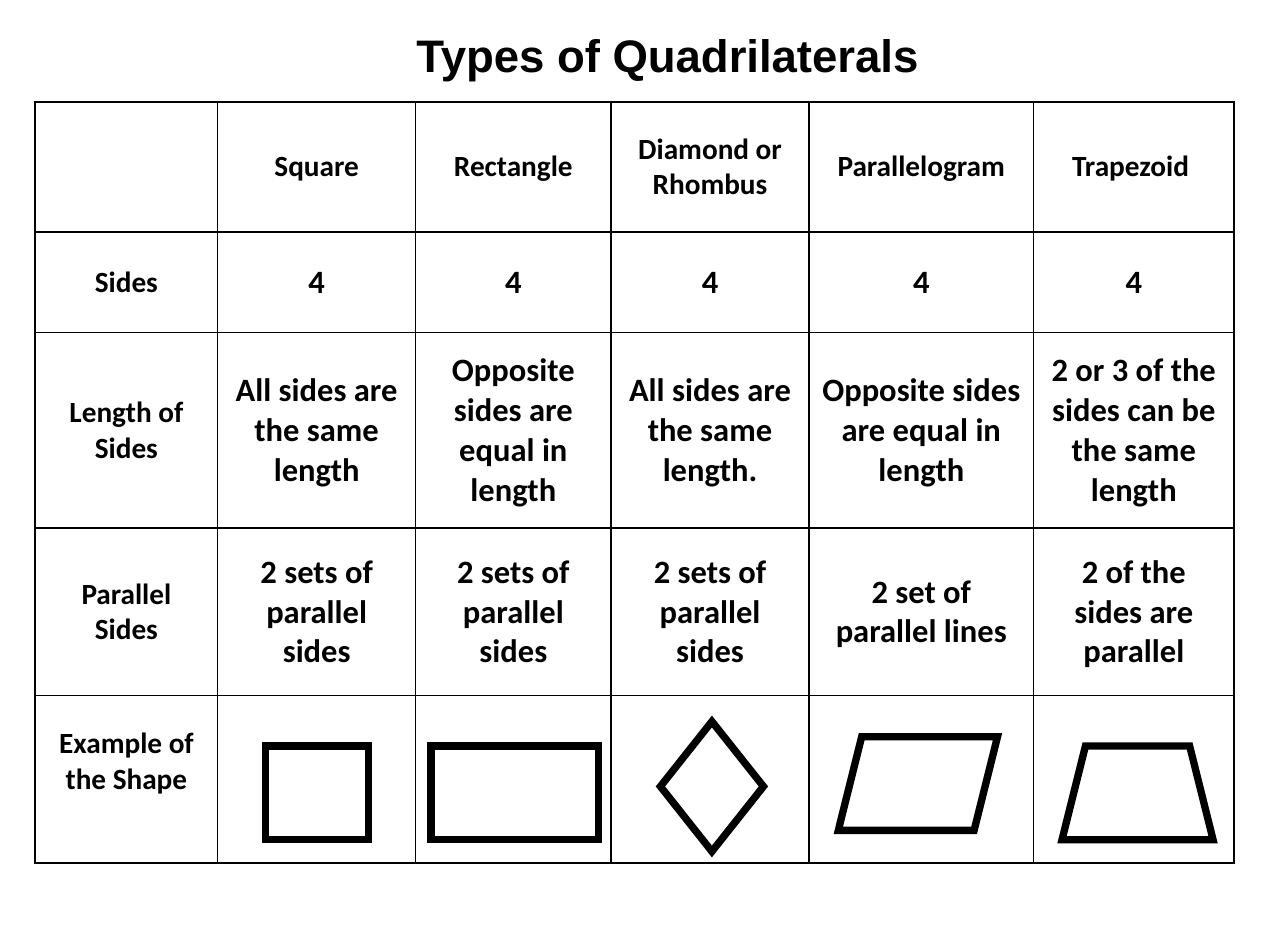
from dataclasses import dataclass

from lxml import etree
from pptx import Presentation
from pptx.dml.color import RGBColor
from pptx.enum.shapes import MSO_SHAPE
from pptx.enum.text import MSO_ANCHOR, MSO_AUTO_SIZE, PP_ALIGN
from pptx.oxml.ns import qn
from pptx.util import Emu, Pt

EMU_PER_PX = 9144
TITLE_ONLY = 5
CENTER = PP_ALIGN.CENTER
MIDDLE = MSO_ANCHOR.MIDDLE
NO_AUTOFIT = MSO_AUTO_SIZE.NONE
RECTANGLE = MSO_SHAPE.RECTANGLE
DIAMOND = MSO_SHAPE.DIAMOND
PARALLELOGRAM = MSO_SHAPE.PARALLELOGRAM
TRAPEZOID = MSO_SHAPE.TRAPEZOID

TITLE = "Types of Quadrilaterals"
TABLE_ROWS = [
    ["", "Square", "Rectangle", "Diamond or Rhombus", "Parallelogram", "Trapezoid "],
    ["Sides"] + ["4"] * 5,
    [
        "Length of Sides",
        "All sides are the same length",
        "Opposite sides are equal in length",
        "All sides are the same length.",
        "Opposite sides are equal in length",
        "2 or 3 of the sides can be the same length",
    ],
    ["Parallel Sides"]
    + ["2 sets of parallel sides"] * 3
    + ["2 set of parallel lines", "2 of the sides are parallel"],
    ["Example of the Shape"] + [""] * 5,
]
COLUMN_WIDTHS = [156, 169, 167, 169, 192, 171]
ROW_HEIGHTS = [111, 86, 167, 143, 143]
EXAMPLE_SHAPES = [
    (RECTANGLE, (227, 637, 88, 80)),
    (RECTANGLE, (368, 637, 143, 80)),
    (DIAMOND, (564, 616, 88, 111)),
    (PARALLELOGRAM, (716, 629, 136, 80)),
    (TRAPEZOID, (907, 637, 129, 80)),
]


@dataclass(frozen=True)
class Theme:
    ink: RGBColor = RGBColor(0, 0, 0)
    paper: RGBColor = RGBColor(255, 255, 255)
    title_font: str = "Arial"
    table_font: str = "Calibri"
    title_size: int = 28
    header_size: int = 18
    value_size: int = 20
    border_width: float = 1
    outline_width: float = 4.5


def px(length):
    return Emu(length * EMU_PER_PX)


def apply_format(target, values):
    for name, value in values.items():
        setattr(target, name, value)


class SlideBuilder:
    def __init__(self, slide, theme):
        self.slide = slide
        self.theme = theme

    def add_text(self, text_frame, text, font_name, size):
        paragraph = text_frame.paragraphs[0]
        paragraph.alignment = CENTER
        run = paragraph.add_run()
        run.text = text
        apply_format(run.font, {"name": font_name, "size": Pt(size), "bold": True})
        run.font.color.rgb = self.theme.ink

    def add_title(self, text, box):
        shape = self.slide.shapes.title
        apply_format(shape, dict(zip(("left", "top", "width", "height"), map(px, box))))
        frame_format = {
            "word_wrap": True,
            "auto_size": NO_AUTOFIT,
            "vertical_anchor": MIDDLE,
        }
        apply_format(shape.text_frame, frame_format)
        self.add_text(shape.text_frame, text, self.theme.title_font, self.theme.title_size)

    def add_borders(self, cell):
        properties = cell._tc.get_or_add_tcPr()
        width = str(Pt(self.theme.border_width))
        for side in ("lnL", "lnR", "lnT", "lnB"):
            line = etree.SubElement(properties, qn(f"a:{side}"), w=width)
            fill = etree.SubElement(line, qn("a:solidFill"))
            etree.SubElement(fill, qn("a:srgbClr"), val=str(self.theme.ink))

    def fill_cell(self, cell, text, size):
        cell.vertical_anchor = MIDDLE
        self.add_borders(cell)
        cell.fill.solid()
        cell.fill.fore_color.rgb = self.theme.paper
        if text:
            self.add_text(cell.text_frame, text, self.theme.table_font, size)

    def add_table(self, rows, left, top, widths, heights):
        box = map(px, (left, top, sum(widths), sum(heights)))
        table = self.slide.shapes.add_table(len(heights), len(widths), *box).table
        apply_format(table, {"first_row": False, "horz_banding": False})
        for column, width in zip(table.columns, widths):
            column.width = px(width)
        for row, height in zip(table.rows, heights):
            row.height = px(height)
        for row_index, texts in enumerate(rows):
            for column_index, text in enumerate(texts):
                is_header = row_index == 0 or column_index == 0
                size = self.theme.header_size if is_header else self.theme.value_size
                self.fill_cell(table.cell(row_index, column_index), text, size)
        return table

    def add_outline(self, kind, box):
        shape = self.slide.shapes.add_shape(kind, *map(px, box))
        shape.shadow.inherit = False
        shape.fill.solid()
        shape.fill.fore_color.rgb = self.theme.paper
        shape.line.color.rgb = self.theme.ink
        shape.line.width = Pt(self.theme.outline_width)
        line = shape._element.spPr.find(qn("a:ln"))
        etree.SubElement(line, qn("a:miter"), lim="800000")


def main():
    presentation = Presentation()
    apply_format(presentation, {"slide_width": px(1100), "slide_height": px(800)})
    slide = presentation.slides.add_slide(presentation.slide_layouts[TITLE_ONLY])
    builder = SlideBuilder(slide, Theme())
    builder.add_title(TITLE, (71, 18, 998, 57))
    table = builder.add_table(TABLE_ROWS, 30, 87, COLUMN_WIDTHS, ROW_HEIGHTS)
    table.cell(len(TABLE_ROWS) - 1, 0).margin_bottom = px(36)
    for kind, box in EXAMPLE_SHAPES:
        builder.add_outline(kind, box)
    presentation.save("out.pptx")


if __name__ == "__main__":
    main()
